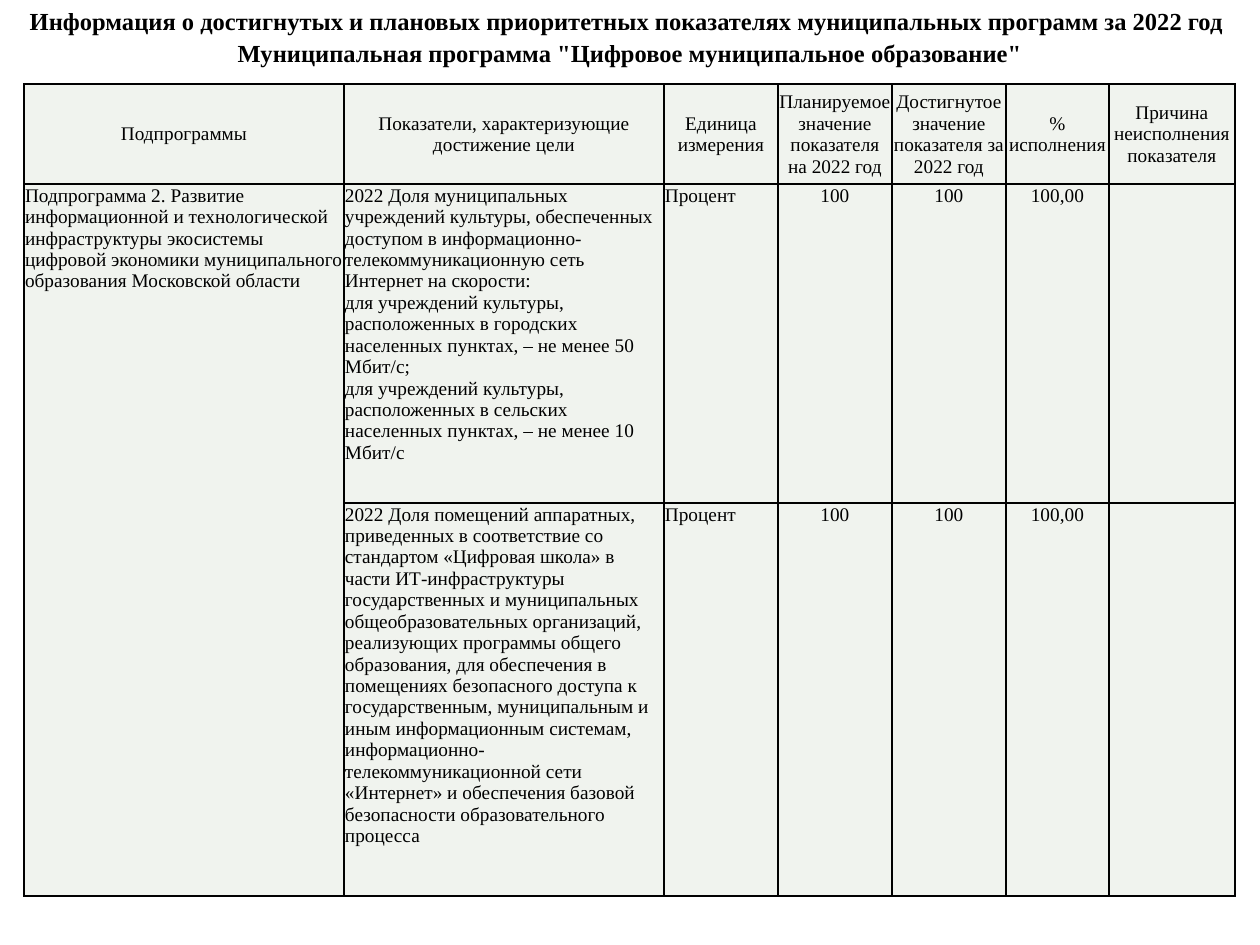
from copy import deepcopy
from dataclasses import dataclass

from lxml.etree import SubElement
from pptx import Presentation
from pptx.dml.color import RGBColor
from pptx.enum.text import MSO_ANCHOR, PP_ALIGN
from pptx.oxml.ns import qn
from pptx.util import Emu, Pt

PIXELS_PER_INCH = 126


@dataclass(frozen=True)
class Theme:
    font: str = "Times New Roman"
    ink: str = "000000"
    cell_fill: str = "F0F3EE"
    title_size: int = 14
    table_size: int = 11
    border_width: int = 1


@dataclass(frozen=True)
class Title:
    text: str
    top: int


@dataclass(frozen=True)
class Indicator:
    program: str
    name: str
    unit: str = "Процент"
    planned: str = "100"
    achieved: str = "100"
    percent: str = "100,00"
    reason: str = ""

    def values(self) -> tuple[str, ...]:
        return (self.program, self.name, self.unit, self.planned,
                self.achieved, self.percent, self.reason)


THEME = Theme()
SLIDE_WIDTH, SLIDE_HEIGHT = 1260, 945
TITLE_HEIGHT = 43
TABLE_LEFT, TABLE_TOP = 24, 84
COLUMN_WIDTHS = (320, 320, 114, 114, 114, 103, 126)
ROW_HEIGHTS = (100, 319, 393)
CENTERED_COLUMNS = range(3, 7)

TITLES = (
    Title("Информация о достигнутых и плановых приоритетных показателях "
          "муниципальных программ за 2022 год ", 0),
    Title('Муниципальная программа "Цифровое муниципальное образование"', 32),
)
HEADERS = (
    "Подпрограммы",
    "Показатели, характеризующие достижение цели",
    "Единица измерения",
    "Планируемое значение показателя на 2022 год",
    "Достигнутое значение показателя за 2022 год",
    "% исполнения",
    "Причина неисполнения показателя",
)
INDICATORS = (
    Indicator(
        "Подпрограмма 2. Развитие информационной и технологической инфраструктуры "
        "экосистемы цифровой экономики муниципального образования Московской области",
        "2022 Доля муниципальных учреждений культуры, обеспеченных доступом в "
        "информационно-телекоммуникационную сеть Интернет на скорости:\n"
        "для учреждений культуры, расположенных в городских населенных пунктах, "
        "– не менее 50 Мбит/с;\n"
        "для учреждений культуры, расположенных в сельских населенных пунктах, "
        "– не менее 10 Мбит/с",
    ),
    Indicator(
        "",
        "2022 Доля помещений аппаратных, приведенных в соответствие со стандартом "
        "«Цифровая школа» в части ИТ-инфраструктуры государственных и муниципальных "
        "общеобразовательных организаций, реализующих программы общего образования, "
        "для обеспечения в помещениях безопасного доступа к государственным, "
        "муниципальным и иным информационным системам, "
        "информационно-телекоммуникационной сети «Интернет» и обеспечения базовой "
        "безопасности образовательного процесса",
    ),
)


def px(length: int) -> Emu:
    """Turn pixels into EMU."""
    return Emu(round(length * 914400 / PIXELS_PER_INCH))


def set_attributes(target, values: dict) -> None:
    """Set every named value on the target."""
    for name, value in values.items():
        setattr(target, name, value)


def write_text(paragraph, text: str, size: int, bold: bool, alignment) -> None:
    """Write text with line breaks that share the format of its runs."""
    paragraph.text = text
    paragraph.alignment = alignment
    for run in paragraph.runs:
        set_attributes(run.font, {"name": THEME.font, "size": Pt(size), "bold": bold})
        run.font.color.rgb = RGBColor.from_string(THEME.ink)
    for line_break in paragraph._p.findall(qn("a:br")):
        line_break.insert(0, deepcopy(paragraph.runs[0]._r.rPr))


def add_title(slide, title: Title) -> None:
    """Add one centred title line across the slide."""
    shape = slide.shapes.add_textbox(0, px(title.top), px(SLIDE_WIDTH), px(TITLE_HEIGHT))
    shape.text_frame.word_wrap = True
    write_text(shape.text_frame.paragraphs[0], title.text, THEME.title_size, True,
               PP_ALIGN.CENTER)


def add_borders(cell) -> None:
    """Draw a solid line on each side of a cell."""
    properties = cell._tc.get_or_add_tcPr()
    for side in ("lnL", "lnR", "lnT", "lnB"):
        line = SubElement(properties, qn(f"a:{side}"), w=str(Pt(THEME.border_width)))
        SubElement(SubElement(line, qn("a:solidFill")), qn("a:srgbClr"), val=THEME.ink)


def format_cell(cell, text: str, is_header: bool, is_centered: bool) -> None:
    """Fill one table cell and set its layout."""
    set_attributes(cell, {
        "margin_left": px(1), "margin_right": px(1),
        "margin_top": px(1), "margin_bottom": 0,
        "vertical_anchor": MSO_ANCHOR.MIDDLE if is_header else MSO_ANCHOR.TOP,
    })
    add_borders(cell)
    cell.fill.solid()
    cell.fill.fore_color.rgb = RGBColor.from_string(THEME.cell_fill)
    if text:
        alignment = PP_ALIGN.CENTER if is_header or is_centered else PP_ALIGN.LEFT
        write_text(cell.text_frame.paragraphs[0], text, THEME.table_size, False, alignment)


def add_indicator_table(slide) -> None:
    """Add the table of programme indicators."""
    rows = (HEADERS, *(indicator.values() for indicator in INDICATORS))
    table = slide.shapes.add_table(
        len(rows), len(HEADERS), px(TABLE_LEFT), px(TABLE_TOP),
        px(sum(COLUMN_WIDTHS)), px(sum(ROW_HEIGHTS))).table
    set_attributes(table, {"first_row": False, "horz_banding": False})
    for column, width in zip(table.columns, COLUMN_WIDTHS):
        column.width = px(width)
    for row, height in zip(table.rows, ROW_HEIGHTS):
        row.height = px(height)
    for row_index, values in enumerate(rows):
        for column_index, text in enumerate(values):
            format_cell(table.cell(row_index, column_index), text,
                        row_index == 0, column_index in CENTERED_COLUMNS)
    table.cell(1, 0).merge(table.cell(len(rows) - 1, 0))


def main() -> None:
    """Build and save the slide."""
    presentation = Presentation()
    set_attributes(presentation, {"slide_width": px(SLIDE_WIDTH),
                                  "slide_height": px(SLIDE_HEIGHT)})
    slide = presentation.slides.add_slide(presentation.slide_layouts[6])
    for title in TITLES:
        add_title(slide, title)
    add_indicator_table(slide)
    presentation.save("out.pptx")


if __name__ == "__main__":
    main()
